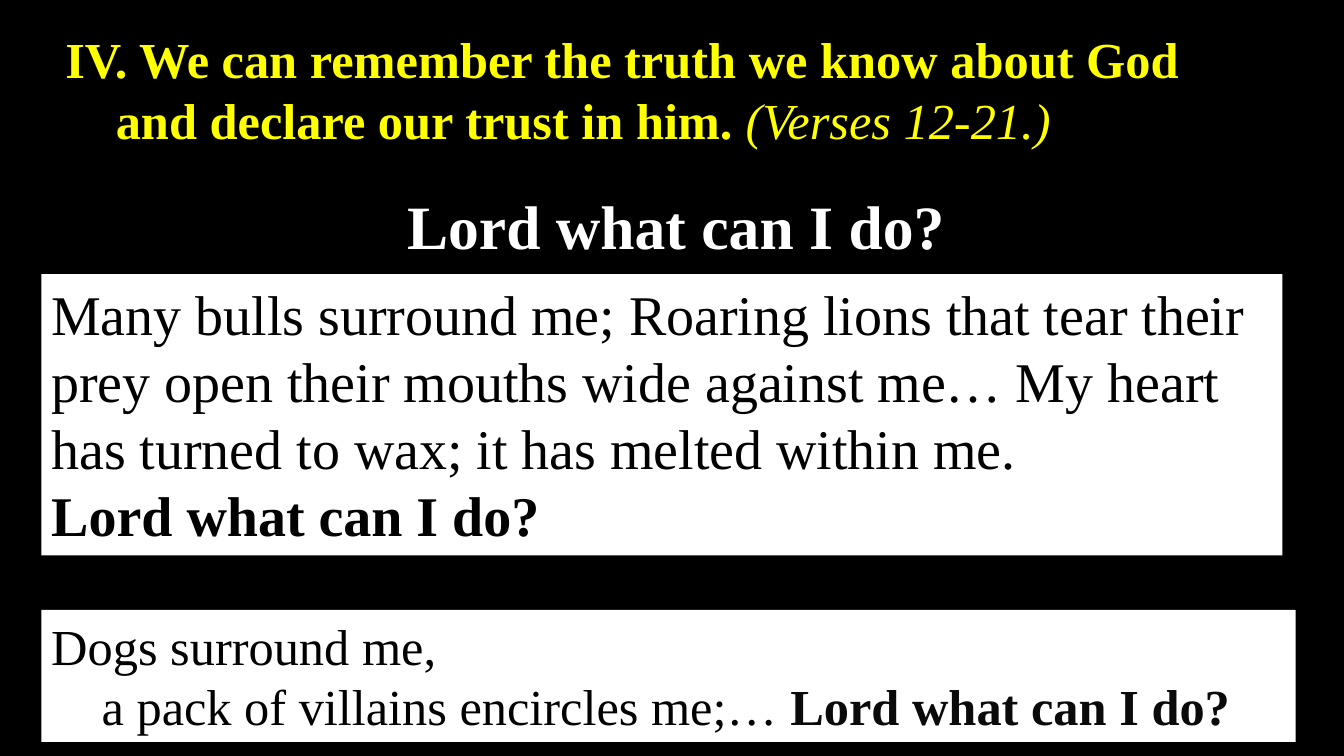
import pptx
import pptx.util
import pptx.dml.color
import pptx.enum.text

Inches = pptx.util.Inches
BLACK = pptx.dml.color.RGBColor(0x00, 0x00, 0x00)
INK = pptx.dml.color.RGBColor(0x0A, 0x0A, 0x0A)
WHITE = pptx.dml.color.RGBColor(0xFF, 0xFF, 0xFF)
YELLOW = pptx.dml.color.RGBColor(0xFF, 0xFF, 0x00)
REFRAIN = "Lord what can I do?"

prs = pptx.Presentation()
prs.slide_width, prs.slide_height = Inches(13.33), Inches(7.5)
s = prs.slides.add_slide(prs.slide_layouts[6])
s.background.fill.solid()
s.background.fill.fore_color.rgb = BLACK


def add_box(left, top, width, height, fill=None, wrap=True):
    sp = s.shapes.add_textbox(Inches(left), Inches(top), Inches(width), Inches(height))
    if fill is not None:
        sp.fill.solid()
        sp.fill.fore_color.rgb = fill
    tf = sp.text_frame
    tf.word_wrap = wrap
    tf.auto_size = pptx.enum.text.MSO_AUTO_SIZE.SHAPE_TO_FIT_TEXT
    return tf


def add_run(p, text, size, color, bold=False, italic=False):
    r = p.add_run()
    r.text = text
    r.font.name = "Times New Roman"
    r.font.size = pptx.util.Pt(size)
    r.font.color.rgb = color
    r.font.bold = bold
    r.font.italic = italic


# Heading
tf = add_box(0.55, 0.23, 11.48, 1.31, wrap=False)
add_run(tf.paragraphs[0], "IV. We can remember the truth we know about God", 36, YELLOW, bold=True)
p = tf.add_paragraph()
add_run(p, "\tand declare our trust in him. ", 36, YELLOW, bold=True)
add_run(p, "(Verses 12-21.)", 36, YELLOW, italic=True)

# First verse panel
tf = add_box(0.41, 2.72, 12.31, 2.79, fill=WHITE)
add_run(tf.paragraphs[0],
        "Many bulls surround me; Roaring lions that tear their prey open their mouths "
        "wide against me… My heart has turned to wax; it has melted within me.", 40, BLACK)
add_run(tf.add_paragraph(), REFRAIN, 40, BLACK, bold=True)

# Question above the panels
tf = add_box(3.94, 1.82, 6.06, 0.84)
add_run(tf.paragraphs[0], REFRAIN, 44, WHITE, bold=True)

# Second verse panel: hanging indent sets the second line in by half an inch
tf = add_box(0.41, 6.05, 12.44, 1.31, fill=WHITE)
p = tf.paragraphs[0]
pPr = p._p.get_or_add_pPr()
pPr.set("marL", str(Inches(0.5)))
pPr.set("indent", str(-Inches(0.5)))
add_run(p, "Dogs surround me,", 36, BLACK)
p.add_line_break()
add_run(p, "a pack of villains encircles me;…", 36, BLACK)
add_run(p, " " + REFRAIN, 36, INK, bold=True)

prs.save("out.pptx")
